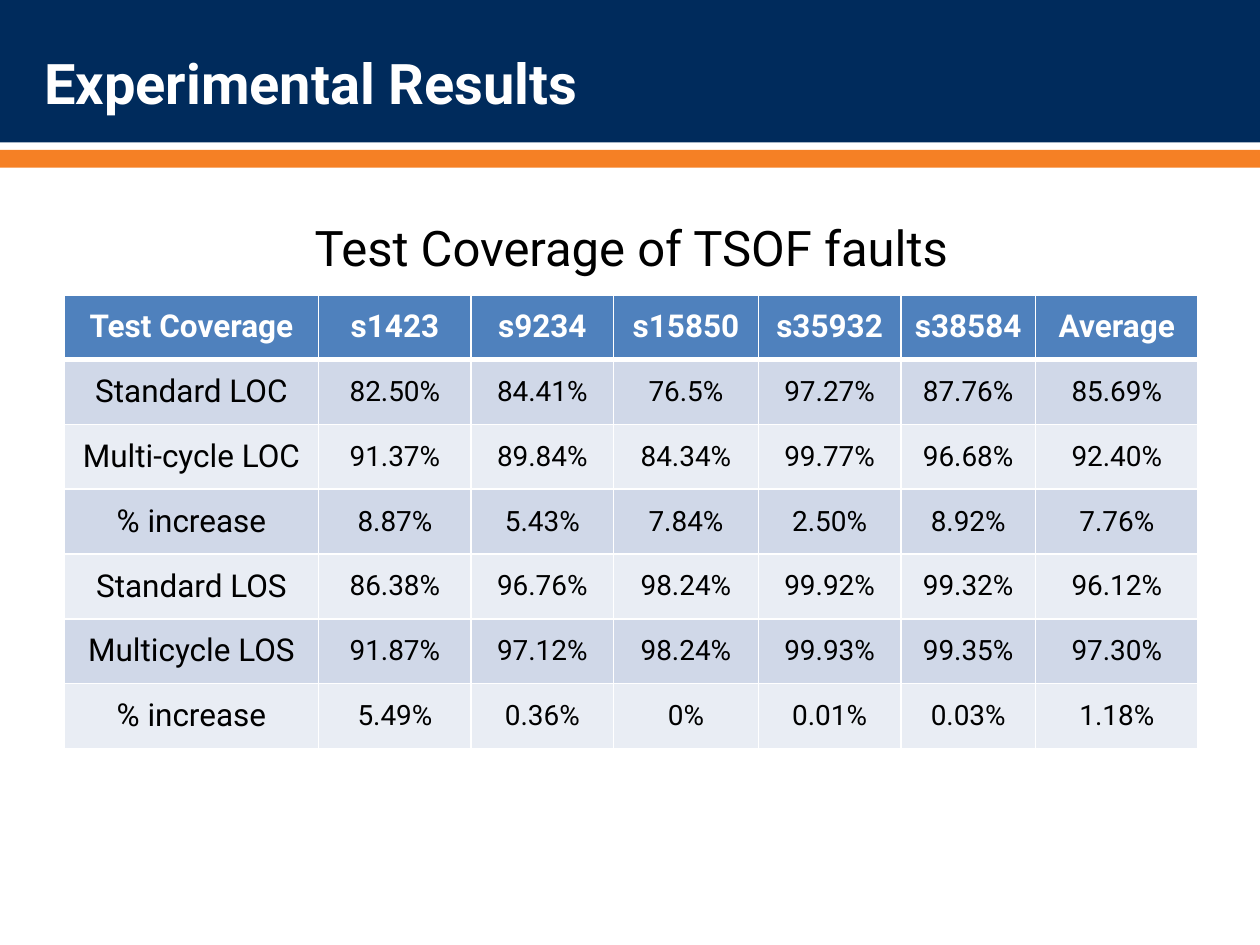
"""Build the Experimental Results slide with its fault coverage table."""
from dataclasses import dataclass

from lxml import etree
from pptx import Presentation
from pptx.dml.color import RGBColor
from pptx.enum.shapes import MSO_SHAPE
from pptx.enum.text import MSO_ANCHOR, PP_ALIGN
from pptx.oxml.ns import qn
from pptx.util import Inches, Pt

RECTANGLE = MSO_SHAPE.RECTANGLE
CENTER, LEFT = PP_ALIGN.CENTER, PP_ALIGN.LEFT
MIDDLE, BOTTOM = MSO_ANCHOR.MIDDLE, MSO_ANCHOR.BOTTOM
TITLE_ONLY = 5


@dataclass(frozen=True)
class Theme:
    font: str = "Roboto"
    navy: str = "002B5C"
    orange: str = "F58025"
    header: str = "4F81BD"
    dark_band: str = "D0D8E8"
    light_band: str = "E9EDF4"
    white: str = "FFFFFF"
    black: str = "000000"
    title_size: int = 32
    caption_size: int = 28
    label_size: int = 18
    value_size: int = 16


theme = Theme()


def write(frame, text, size, color, bold=False, align=CENTER):
    frame.text = text
    para = frame.paragraphs[0]
    para.alignment = align
    para.font.name = theme.font
    para.font.size = Pt(size)
    para.font.bold = bold
    para.font.color.rgb = RGBColor.from_string(color)


def add_border(cell, side, width):
    line = etree.SubElement(cell._tc.get_or_add_tcPr(), qn(f"a:{side}"), w=str(Pt(width)))
    fill = etree.SubElement(line, qn("a:solidFill"))
    etree.SubElement(fill, qn("a:srgbClr"), val=theme.white)


deck = Presentation()
deck.slide_width, deck.slide_height = Inches(10), Inches(7.5)
page = deck.slides.add_slide(deck.slide_layouts[TITLE_ONLY])

for top, height, color in ((0, 1.13, theme.navy), (1.19, 0.14, theme.orange)):
    band = page.shapes.add_shape(RECTANGLE, 0, Inches(top), Inches(10.02), Inches(height))
    band.shadow.inherit = False
    band.fill.solid()
    band.fill.fore_color.rgb = RGBColor.from_string(color)
    band.line.fill.background()

title = page.shapes.title
title.left, title.top = Inches(0.25), Inches(-0.28)
title.width, title.height = Inches(9.53), Inches(1.25)
title.text_frame.vertical_anchor = BOTTOM
write(title.text_frame, "Experimental Results", theme.title_size, theme.white, True, LEFT)
page.shapes.element.append(title.element)

rows = [
    ("Test Coverage", "s1423", "s9234", "s15850", "s35932", "s38584", "Average"),
    ("Standard LOC", "82.50%", "84.41%", "76.5%", "97.27%", "87.76%", "85.69%"),
    ("Multi-cycle LOC", "91.37%", "89.84%", "84.34%", "99.77%", "96.68%", "92.40%"),
    ("% increase", "8.87%", "5.43%", "7.84%", "2.50%", "8.92%", "7.76%"),
    ("Standard LOS", "86.38%", "96.76%", "98.24%", "99.92%", "99.32%", "96.12%"),
    ("Multicycle LOS", "91.87%", "97.12%", "98.24%", "99.93%", "99.35%", "97.30%"),
    ("% increase", "5.49%", "0.36%", "0%", "0.01%", "0.03%", "1.18%"),
]
column_widths = (2.02, 1.21, 1.13, 1.15, 1.13, 1.07, 1.29)
table = page.shapes.add_table(
    len(rows), len(column_widths), Inches(0.51), Inches(2.34), Inches(9), Inches(3.6)
).table
for column, width in zip(table.columns, column_widths):
    column.width = Inches(width)

for row_index, values in enumerate(rows):
    is_header = row_index == 0
    table.rows[row_index].height = Inches(3.6) // len(rows)
    if is_header:
        fill_color = theme.header
    else:
        fill_color = theme.dark_band if row_index % 2 else theme.light_band
    for column_index, value in enumerate(values):
        cell = table.cell(row_index, column_index)
        cell.vertical_anchor = MIDDLE
        size = theme.label_size if is_header or column_index == 0 else theme.value_size
        write(cell.text_frame, value, size, theme.white if is_header else theme.black, is_header)
        for side in ("lnL", "lnR", "lnT", "lnB"):
            thick = (row_index, side) in ((0, "lnB"), (1, "lnT"))
            add_border(cell, side, 3 if thick else 1)
        cell.fill.solid()
        cell.fill.fore_color.rgb = RGBColor.from_string(fill_color)

caption = page.shapes.add_textbox(Inches(0.51), Inches(1.68), Inches(9), Inches(0.57))
caption.text_frame.word_wrap = True
write(caption.text_frame, "Test Coverage of TSOF faults", theme.caption_size, theme.black)

deck.save("out.pptx")
